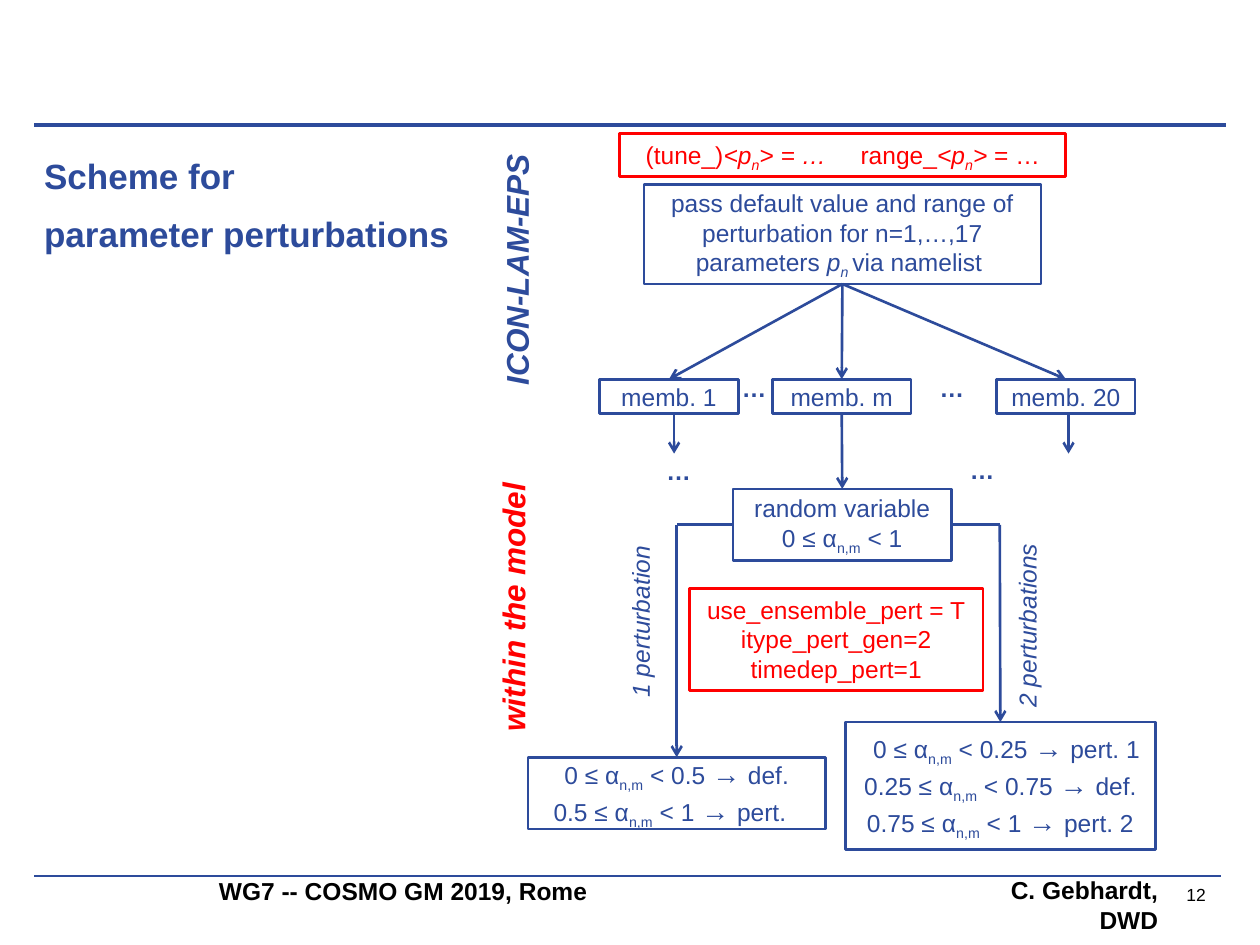
import lxml.etree
import pptx
import pptx.dml.color
import pptx.enum.shapes
import pptx.enum.text
import pptx.oxml.ns
import pptx.util

Pt = pptx.util.Pt
qn = pptx.oxml.ns.qn
ALIGN = pptx.enum.text.PP_ALIGN
ANCHOR = pptx.enum.text.MSO_ANCHOR
BLUE, RED, BLACK = "2D4B9B", "FF0000", "000000"
ITALIC = {"italic": True}
SUB = {"sub": True}
ITALIC_SUB = {"italic": True, "sub": True}
ARROW = ("→ ", {"size": Pt(16)})


def colour(value):
    return pptx.dml.color.RGBColor.from_string(value)


def add_box(place, lines, ink=BLUE, framed=False, align=ALIGN.LEFT,
            anchor=ANCHOR.TOP, frame=None, rotation=0, **font):
    """Add a text box or framed rectangle; a line is a string or a list of (text, format)."""
    lengths = [Pt(length) for length in place]
    if framed:
        box = slide.shapes.add_shape(pptx.enum.shapes.MSO_SHAPE.RECTANGLE, *lengths)
        box.shadow.inherit = False
        box.fill.background()
        box.line.color.rgb = colour(ink)
        box.line.width = Pt(1.5)
    else:
        box = slide.shapes.add_textbox(*lengths)
    box.rotation = rotation
    settings = {"word_wrap": True, "vertical_anchor": anchor} | (frame or {})
    for name, value in settings.items():
        setattr(box.text_frame, name, value)
    for number, line in enumerate(lines):
        para = box.text_frame.paragraphs[0] if number == 0 else box.text_frame.add_paragraph()
        para.alignment = align
        for text, extra in [(line, {})] if isinstance(line, str) else line:
            span = para.add_run()
            span.text = text
            span.font.color.rgb = colour(ink)
            formats = {"name": "Arial", "size": Pt(14)} | font | extra
            if formats.pop("sub", False):
                span._r.get_or_add_rPr().set("baseline", "-25000")
            for name, value in formats.items():
                setattr(span.font, name, value)
    return box


deck = pptx.Presentation()
deck.slide_width, deck.slide_height = Pt(720), Pt(540)
slide = deck.slides.add_slide(deck.slide_layouts[6])

# Title, footer and side labels
no_insets = dict.fromkeys(["margin_left", "margin_top", "margin_right", "margin_bottom"], 0)
title = add_box((25.2, 88.5, 242.6, 56), ["Scheme for", "parameter perturbations"],
                frame=no_insets, size=Pt(20), bold=True)
title.text_frame.paragraphs[1].space_before = Pt(9)
add_box((118, 500.5, 260, 17.3), ["WG7 -- COSMO GM 2019, Rome"], BLACK,
        anchor=ANCHOR.MIDDLE, bold=True)
add_box((560, 508.3, 108.9, 17.3), ["C. Gebhardt,", "DWD"], BLACK, align=ALIGN.RIGHT,
        anchor=ANCHOR.MIDDLE, bold=True)
add_box((652.5, 502.5, 36.5, 17.5), ["12"], BLACK, align=ALIGN.RIGHT,
        anchor=ANCHOR.MIDDLE, frame=no_insets, size=Pt(10))
for place, label, ink in [
    ((213.8, 139.7, 162.7, 28.8), "ICON-LAM-EPS", BLUE),
    ((164.9, 332.6, 256.3, 28.8), "within the model", RED),
]:
    add_box(place, [label], ink, align=ALIGN.CENTER, rotation=270,
            size=Pt(18), bold=True, italic=True)
for left, top, label in [(309.6, 337, "1 perturbation"), (530.6, 342.7, "2 perturbations")]:
    add_box((left, top, 113, 24.5), [label], rotation=270, italic=True)
for left, top in [(416.9, 209.5), (529.9, 209.5), (373.7, 257), (547.2, 256.3)]:
    add_box((left, top, 28, 24.5), ["…"], bold=True)

# Namelist settings
namelist = add_box(
    (354, 76.3, 255, 24.5),
    [[("(tune_)", {}), ("<p", ITALIC), ("n", ITALIC_SUB), ("> = …\t", ITALIC),
      ("range_", {}), ("<p", ITALIC), ("n", ITALIC_SUB), ("> ", ITALIC), ("= …", {})]],
    RED, framed=True, frame={"margin_left": Pt(15)})
tabs = lxml.etree.SubElement(namelist.text_frame.paragraphs[0]._p.get_or_add_pPr(), qn("a:tabLst"))
lxml.etree.SubElement(tabs, qn("a:tab"), pos=str(Pt(122.8)), algn="l")
add_box((394, 336.3, 167.8, 58.3),
        ["use_ensemble_pert = T", "itype_pert_gen=2", "timedep_pert=1"],
        RED, framed=True, align=ALIGN.CENTER)

# Flow chart boxes
node = {"framed": True, "align": ALIGN.CENTER, "anchor": ANCHOR.MIDDLE}
defaults = add_box(
    (368, 105.5, 226.8, 56.8),
    [[("pass default value and range of perturbation for n=1,…,17 parameters ", {}),
      ("p", ITALIC), ("n ", ITALIC_SUB), ("via namelist ", {})]], **node)
members = [add_box((left, 216.7, 79.2, 19.5), [f"memb. {name}"], **node)
           for left, name in [(342.7, "1"), (441.4, "m"), (569.5, "20")]]
random_box = add_box((419, 279.4, 124.6, 41),
                     ["random variable", [("0 ≤ α", {}), ("n,m", SUB), (" < 1", {})]], **node)
results = []
for place, cases in [
    ((301.7, 432.7, 170, 41), [("0", "0.5", "def."), ("0.5", "1", "pert.")]),
    ((483.1, 412.6, 177.1, 72.8),
     [("0", "0.25", "pert. 1"), ("0.25", "0.75", "def."), ("0.75", "1", "pert. 2")]),
]:
    lines = [[(f"{low} ≤ α", {}), ("n,m", SUB), (f" < {high} ", {}), ARROW, (outcome, {})]
             for low, high, outcome in cases]
    results.append(add_box(place, lines, **node))
one_perturbation, two_perturbations = results
one_perturbation.text_frame.paragraphs[1]._p.get_or_add_pPr().set("marR", str(Pt(7.8)))
two_perturbations.text_frame.paragraphs[0]._p.get_or_add_pPr().set("marL", str(Pt(7)))

# Rules and arrows: ends, width, arrowhead, joined box and side at each end
TOP, LEFT, BOTTOM, RIGHT = range(4)
lines = [
    ((19.5, 71.3, 700.5, 71.3), 2, False, None, None),
    ((19.5, 500.5, 697.5, 500.5), 1.2, False, None, None),
    ((385.2, 236.2, 385.2, 259.2), 1.5, True, None, None),
    ((610.6, 236.2, 610.6, 259.2), 1.5, True, None, None),
    ((481, 236.2, 481.3, 279.4), 1.5, True, (members[1], BOTTOM), (random_box, TOP)),
    ((419, 299.9, 386.7, 299.9), 1.5, False, (random_box, LEFT), None),
    ((386.7, 299.9, 386.7, 432.7), 1.5, True, None, (one_perturbation, TOP)),
    ((543.6, 299.9, 571.3, 299.9), 1.5, False, (random_box, RIGHT), None),
    ((571.3, 299.9, 571.7, 412.6), 1.5, True, None, (two_perturbations, TOP)),
]
lines += [((481.4, 162.3, 481.4, 216.7), 1.5, True, (defaults, BOTTOM), (member, TOP))
          for member in members]
for ends, width, has_head, start, finish in lines:
    connector = slide.shapes.add_connector(
        pptx.enum.shapes.MSO_CONNECTOR.STRAIGHT, *[Pt(value) for value in ends])
    connector.line.color.rgb = colour(BLUE)
    connector.line.width = Pt(width)
    if has_head:
        lxml.etree.SubElement(connector.line._get_or_add_ln(), qn("a:tailEnd"), type="arrow")
    lxml.etree.SubElement(connector._element.spPr, qn("a:effectLst"))
    if start:
        connector.begin_connect(*start)
    if finish:
        connector.end_connect(*finish)

deck.save("out.pptx")
